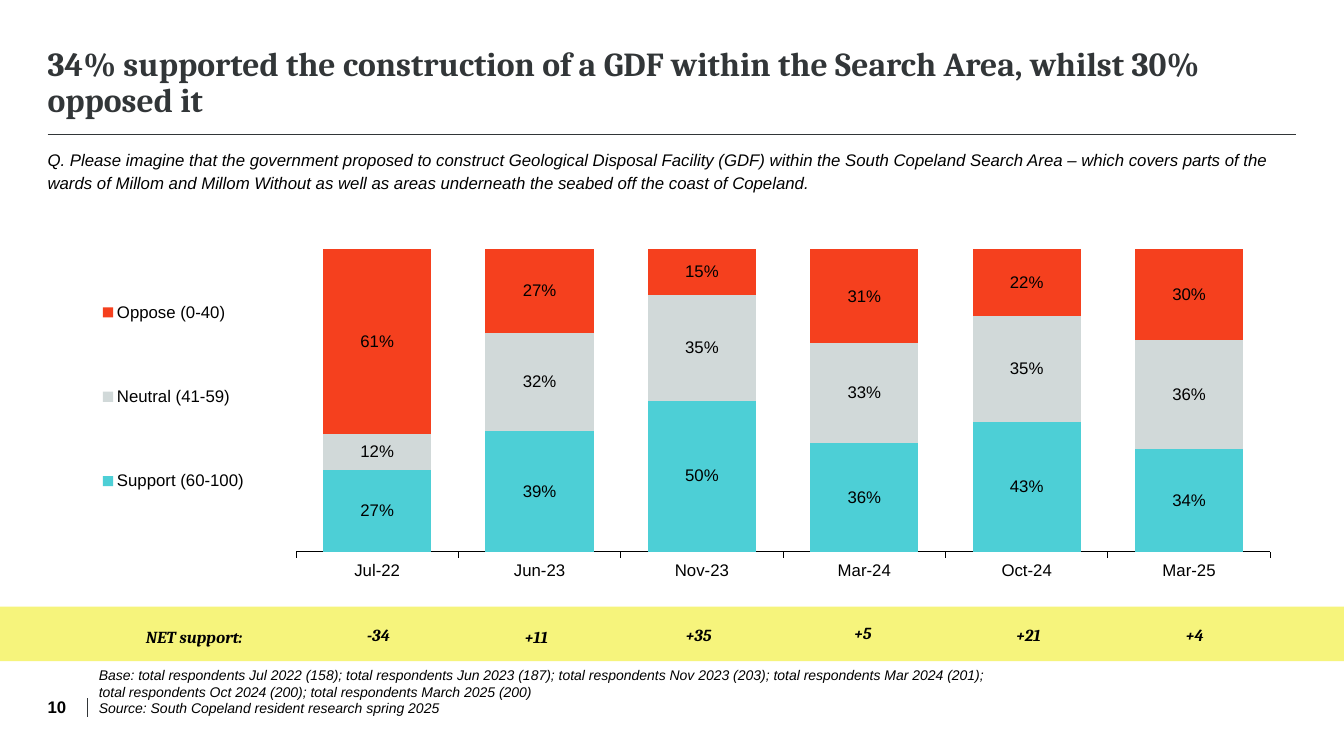
from lxml.etree import SubElement
from pptx import Presentation
from pptx.chart.data import CategoryChartData
from pptx.dml.color import RGBColor
from pptx.enum.chart import XL_CHART_TYPE as ChartType
from pptx.enum.chart import XL_LEGEND_POSITION as LegendPosition
from pptx.enum.chart import XL_TICK_MARK as TickMark
from pptx.enum.shapes import MSO_CONNECTOR as Connector
from pptx.enum.shapes import MSO_SHAPE as Shape
from pptx.enum.text import MSO_ANCHOR as Anchor
from pptx.enum.text import PP_ALIGN as Align
from pptx.oxml import parse_xml
from pptx.oxml.ns import nsdecls, qn
from pptx.util import Cm, Pt

BLACK = RGBColor(0x00, 0x00, 0x00)
CHARCOAL = RGBColor(0x32, 0x36, 0x38)
YELLOW = RGBColor(0xF6, 0xF4, 0x7C)
TEAL = RGBColor(0x4D, 0xCF, 0xD6)
GREY = RGBColor(0xD1, 0xD9, 0xD9)
RED = RGBColor(0xF5, 0x40, 0x1E)

BODY = {"name": "Arial", "size": Pt(12), "bold": False, "italic": False}
QUESTION = BODY | {"italic": True}
NOTE = QUESTION | {"size": Pt(10)}
PAGE_NUMBER = BODY | {"bold": True}
TITLE = {"name": "Cambria", "size": Pt(24), "bold": True}
NET = {"name": "Cambria", "size": Pt(12), "bold": True, "italic": True}

WAVES = ["Jul-22", "Jun-23", "Nov-23", "Mar-24", "Oct-24", "Mar-25"]
SERIES = [
    ("Support (60-100)", TEAL, [0.27, 0.39, 0.50, 0.36, 0.43, 0.34]),
    ("Neutral (41-59)", GREY, [0.12, 0.32, 0.35, 0.33, 0.35, 0.36]),
    ("Oppose (0-40)", RED, [0.61, 0.27, 0.15, 0.31, 0.22, 0.30]),
]
# Score, left and top in centimetres
NET_SCORES = [
    ("-34", 8.64, 15.29),
    ("+11", 12.62, 15.34),
    ("+35", 16.71, 15.29),
    ("+5", 20.85, 15.24),
    ("+21", 25.02, 15.29),
    ("+4", 29.21, 15.29),
]


def set_font(font, style, color=BLACK):
    for key, value in style.items():
        setattr(font, key, value)
    font.color.rgb = color


def manual_layout(x, y, w, h, inner=False):
    """Return a chart layout element, in fractions of the chart's size."""
    layout = parse_xml(f"<c:layout {nsdecls('c')}><c:manualLayout/></c:layout>")
    settings = {"layoutTarget": "inner"} if inner else {}
    settings |= {"xMode": "edge", "yMode": "edge", "x": x, "y": y, "w": w, "h": h}
    for tag, value in settings.items():
        SubElement(layout[0], qn(f"c:{tag}")).set("val", str(value))
    return layout


class SlideBuilder:
    def __init__(self, deck):
        layout = deck.slide_layouts.get_by_name("Title Only")
        self.page = deck.slides.add_slide(layout)
        self.shapes = self.page.shapes

    def fill_text(self, box, lines, style, color=BLACK, anchor=Anchor.TOP,
                  align=Align.LEFT, spacing=1.0, inset=0):
        frame = box.text_frame
        frame.word_wrap = True
        frame.vertical_anchor = anchor
        for side in ("left", "right", "top", "bottom"):
            setattr(frame, f"margin_{side}", Cm(inset))
        for index, line in enumerate(lines):
            para = frame.add_paragraph() if index else frame.paragraphs[0]
            para.alignment = align
            para.line_spacing = spacing
            span = para.add_run()
            span.text = line
            set_font(span.font, style, color)

    def title(self, text, left, top, width, height):
        box = self.shapes.title
        box.left, box.top, box.width, box.height = map(Cm, (left, top, width, height))
        self.fill_text(box, [text], TITLE, CHARCOAL, Anchor.BOTTOM, spacing=0.9)

    def text(self, lines, left, top, width, height, style, **options):
        box = self.shapes.add_textbox(*map(Cm, (left, top, width, height)))
        self.fill_text(box, lines, style, **options)

    def band(self, left, top, width, height, color):
        bar = self.shapes.add_shape(
            Shape.RECTANGLE, *map(Cm, (left, top, width, height)))
        bar.shadow.inherit = False
        bar.fill.solid()
        bar.fill.fore_color.rgb = color
        bar.line.fill.background()

    def rule(self, x1, y1, x2, y2, weight):
        line = self.shapes.add_connector(
            Connector.STRAIGHT, *map(Cm, (x1, y1, x2, y2)))
        line.line.color.rgb = CHARCOAL
        line.line.width = Pt(weight)
        SubElement(line._element.spPr, qn("a:effectLst"))

    def stacked_chart(self, left, top, width, height):
        data = CategoryChartData(number_format="0%")
        data.categories = WAVES
        for name, _, values in SERIES:
            data.add_series(name, values)
        chart = self.shapes.add_chart(
            ChartType.COLUMN_STACKED_100,
            *map(Cm, (left, top, width, height)), data).chart
        chart.has_title = False
        set_font(chart.font, BODY | {"size": Pt(10)})

        plot = chart.plots[0]
        plot.gap_width, plot.overlap = 50, 100
        plot.vary_by_categories = False
        for series, (_, color, _) in zip(plot.series, SERIES):
            series.format.fill.solid()
            series.format.fill.fore_color.rgb = color
            labels = series.data_labels
            labels.show_value = True
            labels.number_format = "0%"
            labels.number_format_is_linked = False
            set_font(labels.font, BODY)

        axis = chart.category_axis
        axis.major_tick_mark = TickMark.OUTSIDE
        axis.format.line.color.rgb = BLACK
        axis.format.line.width = Pt(0.75)
        set_font(axis.tick_labels.font, BODY)
        chart.value_axis.visible = False
        chart.value_axis.has_major_gridlines = False
        chart.value_axis.major_unit = 0.25

        chart.has_legend = True
        legend = chart.legend
        legend.position = LegendPosition.LEFT
        legend.include_in_layout = False
        set_font(legend.font, BODY)

        legend_xml = legend._element
        plot_xml = chart._chartSpace.chart.plotArea
        for element in (legend_xml, plot_xml):
            for old in element.findall(qn("c:layout")):
                element.remove(old)
        legend_xml.insert(1, manual_layout(0, 0, 0.2, 0.92))
        plot_xml.insert(0, manual_layout(0.198, 0.036, 0.779, 0.87, inner=True))


def main():
    deck = Presentation()
    deck.slide_width, deck.slide_height = Cm(33.87), Cm(19.05)
    slide = SlideBuilder(deck)

    slide.title("34% supported the construction of a GDF within the Search Area, "
                "whilst 30% opposed it", 1.2, 1.65, 30.53, 1.37)
    slide.rule(1.2, 3.4, 32.67, 3.4, 0.75)
    slide.text(
        ["Q. Please imagine that the government proposed to construct Geological "
         "Disposal Facility (GDF) within the South Copeland Search Area – which "
         "covers parts of the wards of Millom and Millom Without as well as areas "
         "underneath the seabed off the coast of Copeland."],
        1.2, 3.71, 31.55, 0.81, QUESTION, spacing=1.13)
    slide.stacked_chart(1.22, 5.97, 31.52, 8.76)

    slide.band(0, 15.29, 33.87, 1.37, YELLOW)
    slide.text(["NET support:"], 3.68, 15.72, 3.66, 0.53, NET, spacing=1.13)
    for score, left, top in NET_SCORES:
        slide.text([score], left, top, 1.8, 1.37, NET, anchor=Anchor.MIDDLE,
                   align=Align.CENTER, spacing=1.12, inset=0.2)

    slide.text(["10"], 1.2, 17.15, 0.79, 0.91, PAGE_NUMBER, anchor=Anchor.BOTTOM)
    slide.rule(2.2, 17.6, 2.2, 18.08, 0.5)
    slide.text(
        ["Base: total respondents Jul 2022 (158); total respondents Jun 2023 (187); "
         "total respondents Nov 2023 (203); total respondents Mar 2024 (201); "
         "total respondents Oct 2024 (200); total respondents March 2025 (200)",
         "Source: South Copeland resident research spring 2025"],
        2.49, 17.15, 22.81, 0.91, NOTE, anchor=Anchor.BOTTOM)
    deck.save("out.pptx")


if __name__ == "__main__":
    main()
